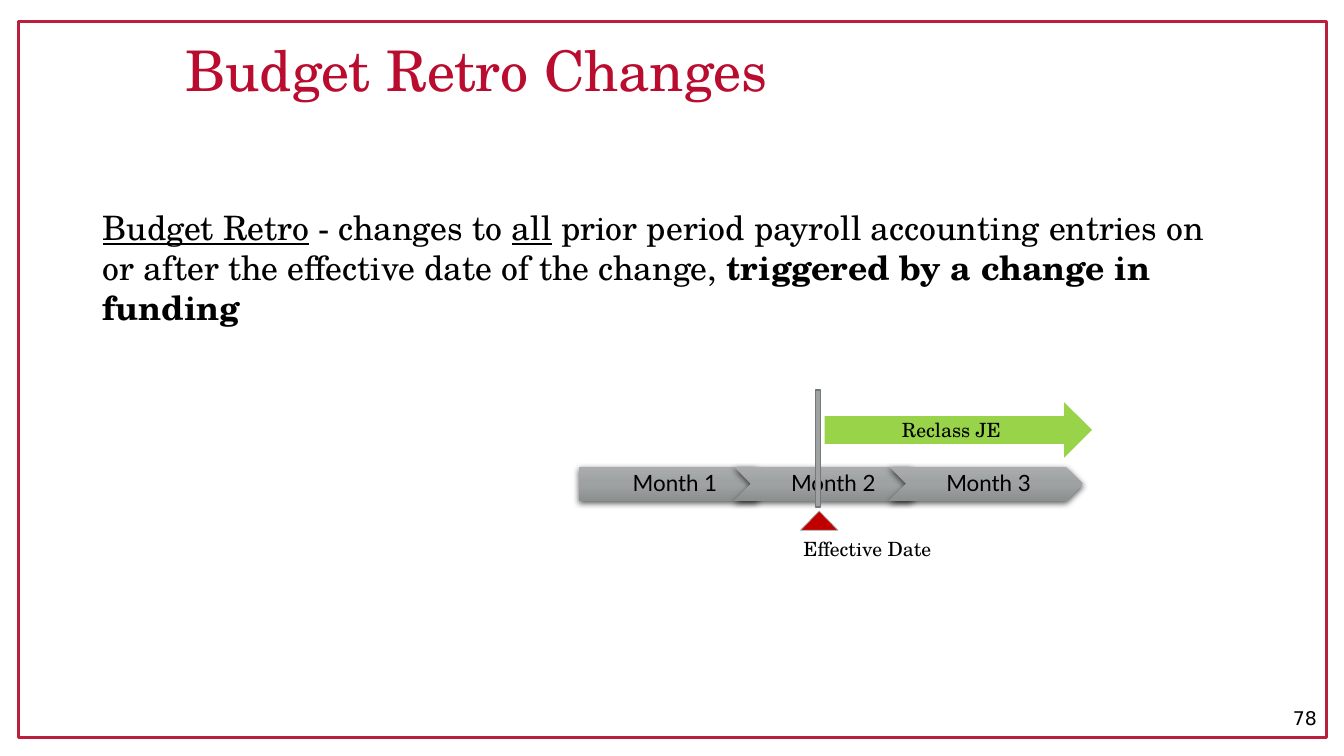
"""Build the Budget Retro Changes slide."""
import copy

import lxml.etree
import pptx
import pptx.dml.color
import pptx.enum.shapes
import pptx.enum.text
import pptx.oxml.ns
import pptx.util

Inches = pptx.util.Inches
Pt = pptx.util.Pt
SHAPE = pptx.enum.shapes.MSO_SHAPE
ALIGN = pptx.enum.text.PP_ALIGN
ANCHOR = pptx.enum.text.MSO_ANCHOR

COLORS = {
    "frame": "BC1E3E",
    "title": "BA0C2F",
    "text": "000000",
    "marker": "C00000",
    "gray": "9EA2A2",
    "light_gray": "A9ACAC",
    "dark_gray": "8C9090",
    "bar_edge": "757878",
    "green": "98D349",
}
SERIF = "TeX Gyre Schola"


def rgb(name):
    return pptx.dml.color.RGBColor.from_string(COLORS[name])


def write(box, text, size=14, font=SERIF, color="text", align=ALIGN.LEFT,
          anchor=ANCHOR.TOP, spacing=1.0, insets=(0.1, 0.05, 0.1, 0.05)):
    frame = box.text_frame
    frame.word_wrap = True
    frame.vertical_anchor = anchor
    frame.margin_left, frame.margin_top, frame.margin_right, frame.margin_bottom = map(Inches, insets)
    para = frame.paragraphs[0]
    para.alignment = align
    para.line_spacing = spacing
    spans = [(text, {})] if isinstance(text, str) else text
    for words, emphasis in spans:
        span = para.add_run()
        span.text = words
        span.font.name = font
        span.font.size = Pt(size)
        span.font.color.rgb = rgb(color)
        span.font.bold = emphasis.get("bold", False)
        span.font.underline = emphasis.get("underline", False)


class SlideBuilder:
    def __init__(self, page):
        self.page = page

    def text(self, place, text, **style):
        box = self.page.shapes.add_textbox(*map(Inches, place))
        write(box, text, **style)
        return box

    def shape(self, kind, place, fill=None, line=None, width=1):
        shape = self.page.shapes.add_shape(kind, *map(Inches, place))
        shape.shadow.inherit = False
        if fill:
            shape.fill.solid()
            shape.fill.fore_color.rgb = rgb(fill)
        else:
            shape.fill.background()
        if line:
            shape.line.color.rgb = rgb(line)
            shape.line.width = Pt(width)
        else:
            shape.line.fill.background()
        return shape

    def month(self, kind, place):
        shape = self.shape(kind, place)
        self.shade(shape)
        self.drop_shadow(shape)
        return shape

    def shade(self, shape):
        shape.fill.gradient()
        shape.fill.gradient_angle = 270
        first = shape.fill.gradient_stops[0]
        stop_list = shape._element.spPr.find(".//" + pptx.oxml.ns.qn("a:gsLst"))
        stop_list.insert(1, copy.deepcopy(stop_list[0]))
        names = ("light_gray", "gray", "dark_gray")
        for index, (stop, name) in enumerate(zip(shape.fill.gradient_stops, names)):
            stop.position = index / 2
            stop.color.rgb = rgb(name)

    def drop_shadow(self, shape):
        qn = pptx.oxml.ns.qn
        effects = shape._element.spPr.find(qn("a:effectLst"))
        shadow = lxml.etree.SubElement(
            effects, qn("a:outerShdw"), blurRad=str(Pt(4.5)), dist=str(Pt(1.5)),
            dir="5400000", algn="ctr", rotWithShape="0")
        color = lxml.etree.SubElement(shadow, qn("a:srgbClr"), val=COLORS["text"])
        lxml.etree.SubElement(color, qn("a:alpha"), val="63000")


def main():
    deck = pptx.Presentation()
    deck.slide_width = Inches(13.33)
    deck.slide_height = Inches(7.5)
    slide = SlideBuilder(deck.slides.add_slide(deck.slide_layouts[6]))

    slide.shape(SHAPE.RECTANGLE, (0.18, 0.21, 12.98, 7.11), line="frame", width=2)
    slide.text((1.74, 0.26, 11.42, 0.93), "Budget Retro Changes", size=40,
               color="title", anchor=ANCHOR.MIDDLE, spacing=0.9)
    slide.text((0.92, 2, 11.5, 4.95), [
        ("Budget Retro", {"underline": True}),
        (" - changes to ", {}),
        ("all", {"underline": True}),
        (" prior period payroll accounting entries on or after the effective date of the change, ", {}),
        ("triggered by a change in funding", {"bold": True}),
    ], size=24)
    slide.text((10.16, 6.92, 3, 0.4), "78", size=13.5, font="DejaVu Sans",
               align=ALIGN.RIGHT, anchor=ANCHOR.MIDDLE)

    months = [
        ("Month 1", SHAPE.PENTAGON, 0, 1.84, 0.09),
        ("Month 2", SHAPE.CHEVRON, 0.17, 1.58, 0.07),
        ("Month 3", SHAPE.CHEVRON, 0.17, 1.58, 0.07),
    ]
    for index, (label, kind, offset, width, inset) in enumerate(months):
        left = 5.74 + index * 1.54
        slide.month(kind, (left, 4.63, 1.92, 0.34))
        slide.text((left + offset, 4.63, width, 0.34), label, size=16, font="Lato",
                   align=ALIGN.CENTER, anchor=ANCHOR.MIDDLE, spacing=0.9,
                   insets=(inset, 0.05, 0.02, 0.05))

    slide.shape(SHAPE.ISOSCELES_TRIANGLE, (7.94, 5.07, 0.37, 0.19), "marker", "gray", 0.5)
    slide.shape(SHAPE.RECTANGLE, (8.09, 3.87, 0.05, 1.16), "gray", "bar_edge")
    slide.text((7.87, 5.28, 2.21, 0.34), "Effective Date")
    reclass = slide.shape(SHAPE.RIGHT_ARROW, (8.18, 3.99, 2.65, 0.55), "green")
    write(reclass, "Reclass JE", align=ALIGN.CENTER, anchor=ANCHOR.MIDDLE)

    deck.save("out.pptx")


if __name__ == "__main__":
    main()
